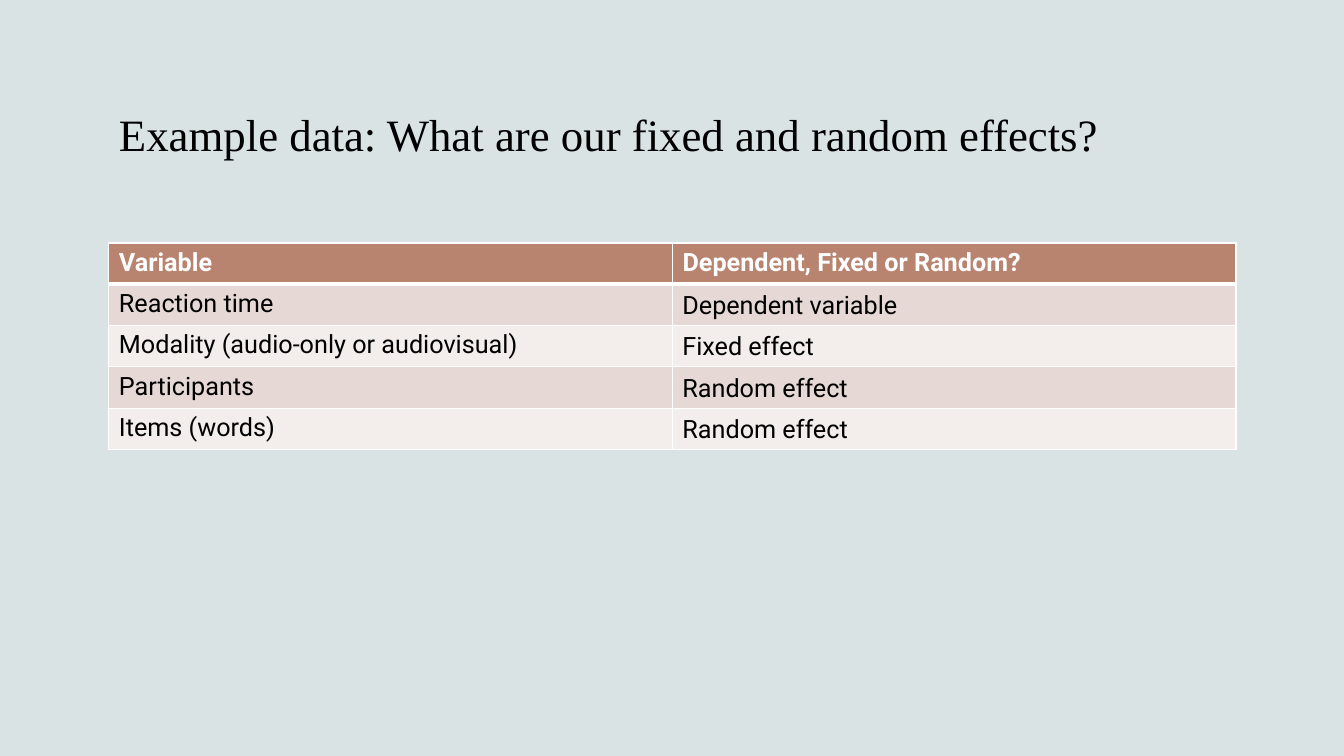
from pptx import Presentation
from pptx.dml.color import RGBColor as RGB
from pptx.enum.text import MSO_ANCHOR as Anchor, MSO_AUTO_SIZE as AutoSize, PP_ALIGN as Align
from pptx.oxml import parse_xml
from pptx.oxml.ns import nsdecls
from pptx.util import Inches, Pt

BACKGROUND = RGB(0xDA, 0xE3, 0xE3)
HEADER = RGB(0xB8, 0x84, 0x70)
BANDS = RGB(0xF3, 0xED, 0xEB), RGB(0xE6, 0xD9, 0xD5)
WHITE = RGB(0xFF, 0xFF, 0xFF)
BLACK = RGB(0, 0, 0)

VARIABLES = ["Reaction time", "Modality (audio-only or audiovisual)",
             "Participants", "Items (words)"]
ANSWERS = [("Dependent variable", 2.7), ("Fixed effect", 3),
           ("Random effect", 3.24), ("Random effect", 2.49)]


class EffectsSlide:
    """Draws styled elements on one slide, placed by table columns and rows."""

    LEFT, TOP = 1.08, 2.41
    COL, ROW = 5.59, 0.41
    TITLE_FONT, BODY_FONT = "Times New Roman", "Roboto"

    def __init__(self, prs):
        self.s = prs.slides.add_slide(prs.slide_layouts[5])
        fill = self.s.background.fill
        fill.solid()
        fill.fore_color.rgb = BACKGROUND

    def x(self, col):
        return Inches(self.LEFT + col * self.COL)

    def y(self, row):
        return Inches(self.TOP + row * self.ROW)

    def set_text(self, tf, text, font=BODY_FONT, size=18, color=BLACK, bold=False):
        tf.text = text
        p = tf.paragraphs[0]
        p.alignment = Align.LEFT
        for r in p.runs:
            r.font.name, r.font.size, r.font.bold = font, Pt(size), bold
            r.font.color.rgb = color

    def title(self, text):
        sp = self.s.shapes.title
        sp.left, sp.top = self.x(0), Inches(0.43)
        sp.width, sp.height = Inches(2 * self.COL), Inches(1.22)
        tf = sp.text_frame
        tf.word_wrap, tf.auto_size = True, AutoSize.NONE
        tf.vertical_anchor = Anchor.BOTTOM
        self.set_text(tf, text, self.TITLE_FONT, 32)
        tf.paragraphs[0].line_spacing = 0.9

    def borders(self, cell, row):
        tc_pr = cell._tc.get_or_add_tcPr()
        header_edge = {("B", 0), ("T", 1)}
        for side in "LRTB":
            width = Pt(3 if (side, row) in header_edge else 1)
            tc_pr.append(parse_xml(
                f'<a:ln{side} {nsdecls("a")} w="{width}"><a:solidFill>'
                f'<a:srgbClr val="{WHITE}"/></a:solidFill></a:ln{side}>'))

    def table(self, rows):
        n = len(rows)
        table = self.s.shapes.add_table(n, 2, self.x(0), self.y(0),
                                        Inches(2 * self.COL), Inches(n * self.ROW)).table
        for i, texts in enumerate(rows):
            table.rows[i].height = Inches(self.ROW)
            for j, text in enumerate(texts):
                cell = table.cell(i, j)
                self.borders(cell, i)
                cell.fill.solid()
                cell.fill.fore_color.rgb = BANDS[i % 2] if i else HEADER
                self.set_text(cell.text_frame, text,
                              color=BLACK if i else WHITE, bold=i == 0)

    def label(self, text, col, row, width):
        sp = self.s.shapes.add_textbox(self.x(col), self.y(row), Inches(width), Inches(0.4))
        tf = sp.text_frame
        tf.word_wrap, tf.auto_size = True, AutoSize.SHAPE_TO_FIT_TEXT
        self.set_text(tf, text)


def main():
    prs = Presentation()
    prs.slide_width, prs.slide_height = Inches(13.33), Inches(7.5)
    slide = EffectsSlide(prs)
    slide.title("Example data: What are our fixed and random effects?")
    slide.table([("Variable", "Dependent, Fixed or Random?")]
                + [(name, "") for name in VARIABLES])
    for row, (answer, width) in enumerate(ANSWERS, start=1):
        slide.label(answer, 1, row, width)
    prs.save("out.pptx")


if __name__ == "__main__":
    main()
